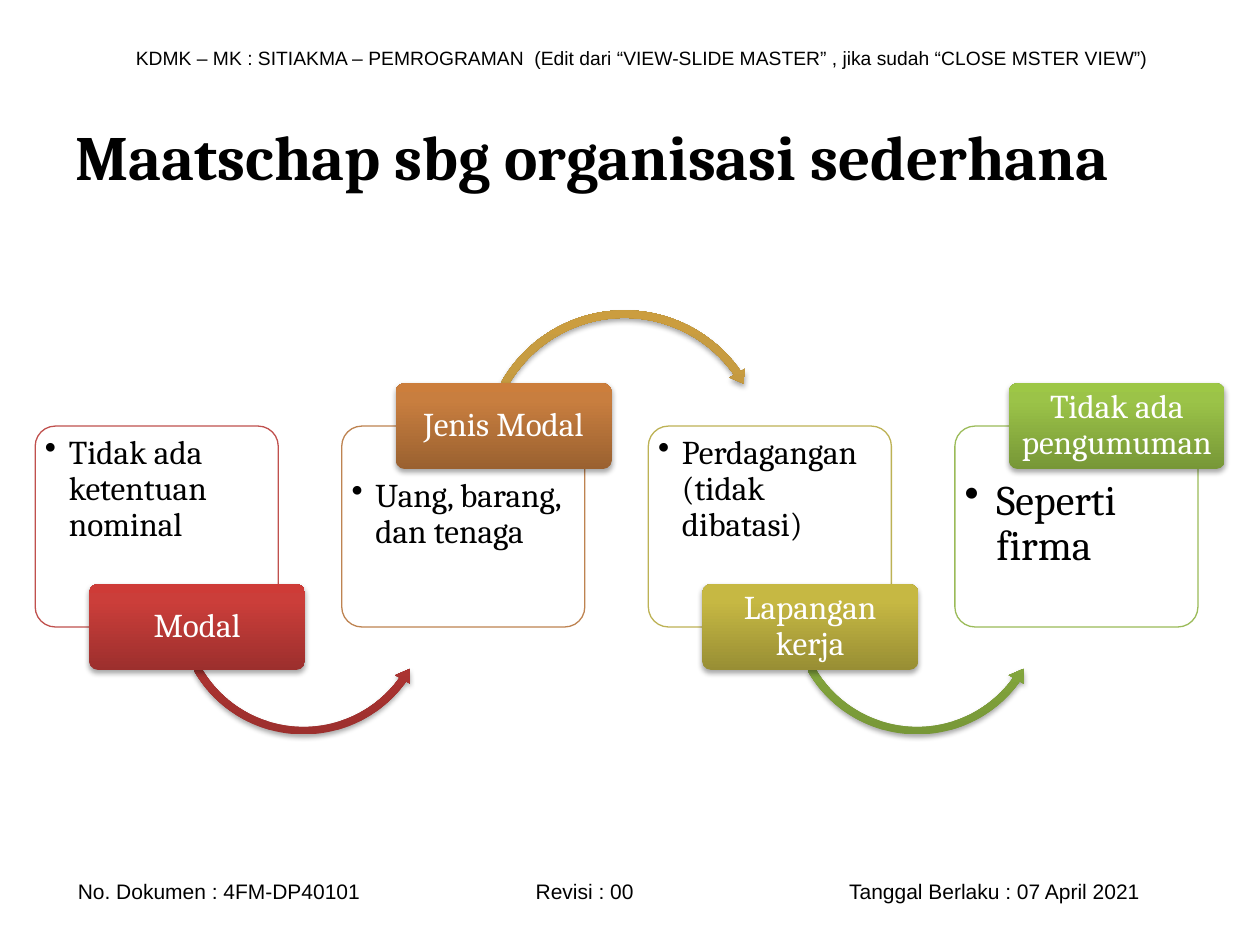
from lxml.etree import SubElement
from pptx import Presentation
from pptx.dml.color import RGBColor
from pptx.enum.shapes import MSO_SHAPE
from pptx.enum.text import MSO_ANCHOR, PP_ALIGN
from pptx.oxml import parse_xml
from pptx.oxml.ns import nsdecls, qn
from pptx.util import Cm, Pt

theme = {
    "serif": "Cambria", "sans": "Arial",
    "black": "000000", "white": "FFFFFF",
    "title": 36, "header": 11, "footer": 12, "label": 19, "large": 24,
    # gradients from bottom to top
    "red": ("9C2F2D", "CB3E3A", "CE3B37"),
    "orange": ("9A6130", "C87E3F", "CC7E3C"),
    "gold": ("997832", "C79C41", "CB9D3F"),
    "olive": ("988E34", "C6B843", "C9BB41"),
    "green": ("779737", "9BC348", "9DC746"),
}


def write(shape, text, size, font, color, align, anchor, insets, bold=False):
    """Put one formatted paragraph into a shape and return the paragraph."""
    frame = shape.text_frame
    left, top, right, bottom = (Cm(inset) for inset in insets)
    settings = {"word_wrap": True, "vertical_anchor": anchor, "margin_left": left,
                "margin_top": top, "margin_right": right, "margin_bottom": bottom}
    for name, value in settings.items():
        setattr(frame, name, value)
    para = frame.paragraphs[0]
    para.alignment = align
    span = para.add_run()
    span.text = text
    for name, value in {"name": font, "size": Pt(size), "bold": bold}.items():
        setattr(span.font, name, value)
    span.font.color.rgb = RGBColor.from_string(color)
    return para


def add_glossy(kind, box, adjustments, colors):
    """Add a borderless shape with a vertical gradient and a soft shadow."""
    shape = page.shapes.add_shape(kind, *(Cm(length) for length in box))
    for index, value in enumerate(adjustments):
        shape.adjustments[index] = value
    shape.line.fill.background()
    stops = "".join(f'<a:gs pos="{place}000"><a:srgbClr val="{color}"/></a:gs>'
                    for place, color in zip((0, 80, 100), colors))
    properties = shape.element.spPr
    properties.replace(properties.find(qn("a:solidFill")) if properties.find(qn("a:solidFill")) is not None
                       else shape.fill.solid() or properties.find(qn("a:solidFill")),
                       parse_xml(f'<a:gradFill {nsdecls("a")} rotWithShape="1"><a:gsLst>{stops}'
                                 '</a:gsLst><a:lin ang="16200000" scaled="0"/></a:gradFill>'))
    properties.append(parse_xml(
        f'<a:effectLst {nsdecls("a")}><a:outerShdw blurRad="{Pt(3.1)}" dist="{Pt(1.8)}" '
        'dir="5400000" rotWithShape="0"><a:srgbClr val="000000"><a:alpha val="35000"/>'
        '</a:srgbClr></a:outerShdw></a:effectLst>'))
    return shape


deck = Presentation()
deck.slide_width, deck.slide_height = Cm(25.4), Cm(19.05)
page = deck.slides.add_slide(deck.slide_layouts[5])

# Header and footer lines
margins = (0.25, 0.13, 0.25, 0.13)
header = page.shapes.add_textbox(Cm(2.49), Cm(0.79), Cm(21.21), Cm(0.74))
write(header, "KDMK – MK : SITIAKMA – PEMROGRAMAN  (Edit dari “VIEW-SLIDE MASTER” , "
      "jika sudah “CLOSE MSTER VIEW”)", theme["header"], theme["sans"], theme["black"],
      PP_ALIGN.LEFT, MSO_ANCHOR.MIDDLE, margins)
footer = page.shapes.add_textbox(Cm(1.32), Cm(17.58), Cm(23.19), Cm(0.76))
para = write(footer, "No. Dokumen : 4FM-DP40101\tRevisi : 00\tTanggal Berlaku : 07 April 2021",
             theme["footer"], theme["sans"], theme["black"],
             PP_ALIGN.LEFT, MSO_ANCHOR.MIDDLE, margins)
tabs = SubElement(para._p.get_or_add_pPr(), qn("a:tabLst"))
for stop in (9.23, 15.55):
    SubElement(tabs, qn("a:tab"), pos=str(Cm(stop)), algn="l")

# Title
title = page.shapes.title
title.left, title.top, title.width, title.height = Cm(1.27), Cm(1.55), Cm(22.86), Cm(3.18)
write(title, "Maatschap sbg organisasi sederhana", theme["title"], theme["serif"],
      theme["black"], PP_ALIGN.LEFT, MSO_ANCHOR.MIDDLE, margins, bold=True)

# Process steps: label, detail, detail size, bullet indent, line, gradient, label on top
steps = [
    ("Modal", "Tidak ada ketentuan nominal", "label", 0.48, "C0504D", "red", False),
    ("Jenis Modal", "Uang, barang, dan tenaga", "label", 0.48, "BE8351", "orange", True),
    ("Lapangan kerja", "Perdagangan (tidak dibatasi)", "label", 0.48, "BDB255", "olive", False),
    ("Tidak ada pengumuman", "Seperti firma", "large", 0.64, "9BBB59", "green", True),
]
# Arrows to the next step: kind, left, top, side, adjustments, gradient
lower = (MSO_SHAPE.LEFT_CIRCULAR_ARROW, (0.029, 3.582, 21.337, 90.245, 0.034))
upper = (MSO_SHAPE.CIRCULAR_ARROW, (0.026, 3.18, 195.065, 125.755, 0.031))
arrows = [
    (*lower, 3.48, 9.63, 5.28, "red"),
    (*upper, 9.63, 6.15, 5.92, "gold"),
    (*lower, 15.85, 9.63, 5.28, "green"),
]
first_left, pitch, card_top, card_width, card_height = 0.71, 6.18, 8.59, 4.9, 4.05
label_shift, label_width, label_height = 1.09, 4.35, 1.73

for index, (label, detail, size, indent, line, colors, on_top) in enumerate(steps):
    left = first_left + index * pitch

    # Card with its bullet
    card = page.shapes.add_shape(MSO_SHAPE.ROUNDED_RECTANGLE, Cm(left), Cm(card_top),
                                 Cm(card_width), Cm(card_height))
    card.adjustments[0] = 0.1
    card.shadow.inherit = False
    card.fill.solid()
    card.fill.fore_color.rgb = RGBColor.from_string(theme["white"])
    card.line.color.rgb = RGBColor.from_string(line)
    card.line.width = Pt(0.75)
    text_top = 0.08 + label_height / 2 * on_top
    para = write(card, detail, theme[size], theme["serif"], theme["black"],
                 PP_ALIGN.LEFT, MSO_ANCHOR.TOP, (0.08, text_top, 0.08, 0.08))
    para.line_spacing = 0.9
    properties = para._p.get_or_add_pPr()
    properties.set("marL", str(Cm(indent)))
    properties.set("indent", str(-Cm(indent)))
    SubElement(properties, qn("a:buChar"), char="•")

    # Arrow to the next step
    if index < len(arrows):
        kind, adjustments, arrow_left, arrow_top, side, shade = arrows[index]
        add_glossy(kind, (arrow_left, arrow_top, side, side), adjustments, theme[shade])

    # Label centred on the card's top or bottom edge
    edge = card_top if on_top else card_top + card_height
    tag = add_glossy(MSO_SHAPE.ROUNDED_RECTANGLE,
                     (left + label_shift, edge - label_height / 2, label_width, label_height),
                     (0.1,), theme[colors])
    para = write(tag, label, theme["label"], theme["serif"], theme["white"],
                 PP_ALIGN.CENTER, MSO_ANCHOR.MIDDLE, (0.1, 0.08, 0.1, 0.08))
    para.line_spacing = 0.9

deck.save("out.pptx")
